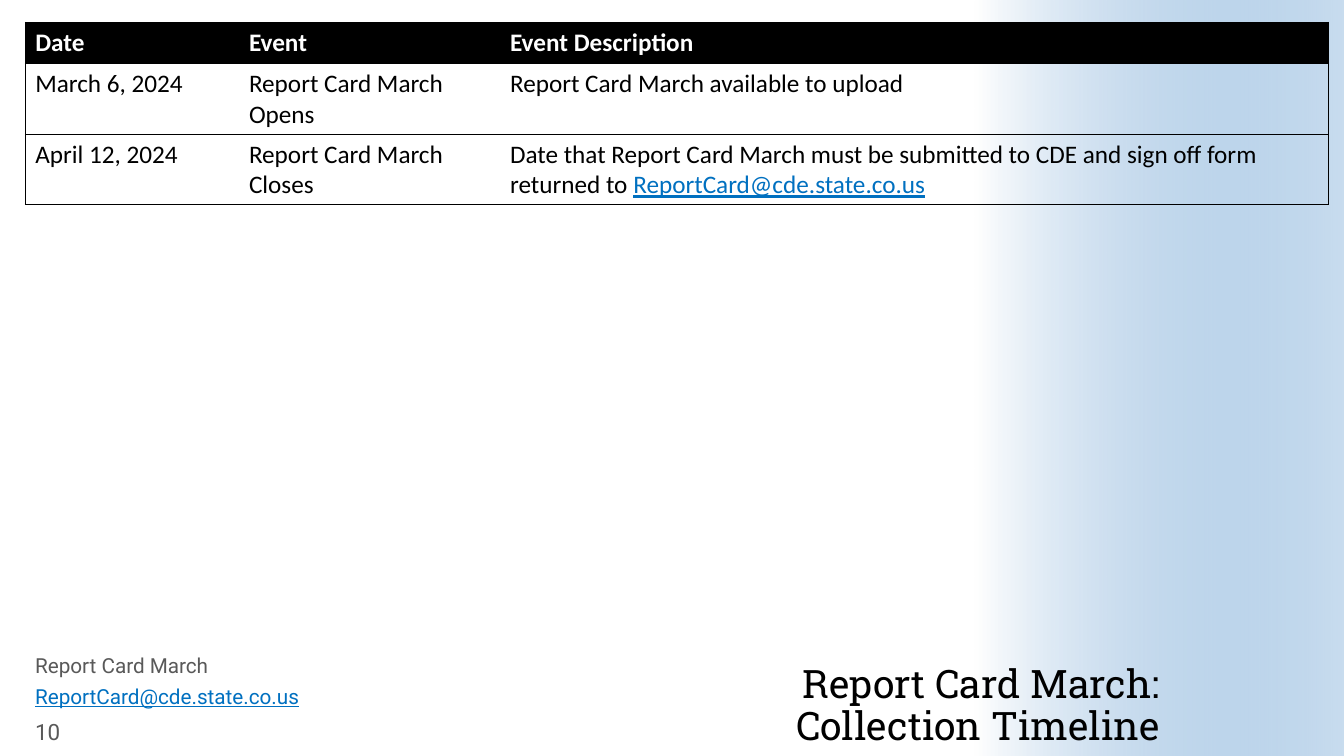
from dataclasses import dataclass

from lxml.etree import SubElement
from pptx import Presentation
from pptx.dml.color import RGBColor as RGB
from pptx.enum.shapes import MSO_SHAPE as SHAPE
from pptx.enum.text import MSO_ANCHOR as ANCHOR, PP_ALIGN as ALIGN
from pptx.oxml.ns import qn
from pptx.util import Inches, Pt


@dataclass(frozen=True)
class Theme:
    """Colours, fonts and type sizes of the deck."""
    black: RGB = RGB(0, 0, 0)
    white: RGB = RGB(255, 255, 255)
    gray: RGB = RGB(0x59, 0x59, 0x59)
    link: RGB = RGB(0x00, 0x70, 0xC0)
    blue: RGB = RGB(0x48, 0x8B, 0xC9)
    title_font: str = "Roboto Slab"
    table_font: str = "Calibri"
    footer_font: str = "Roboto"
    title_size: float = 28
    table_size: float = 18
    footer_size: float = 14.8
    number_size: float = 16


T = Theme()
EMAIL = "ReportCard@cde.state.co.us"
NO_GRID = "{2D5ABB26-0587-4C30-8999-92F81FD0307C}"
COLUMNS = (2.12, 2.59, 8.22)
ROW_HEIGHT = 0.41
TIMELINE = (
    ("Date", "Event", "Event Description"),
    ("March 6, 2024", "Report Card March Opens", "Report Card March available to upload"),
    ("April 12, 2024", "Report Card March Closes",
     "Date that Report Card March must be submitted to CDE and sign off form returned to "),
)


def set_font(font, name, size, color, bold=False, underline=None):
    """Apply one type style to a font."""
    font.name, font.size, font.bold = name, Pt(size), bold
    font.color.rgb = color
    font.underline = underline


def add_text(s, text, x, y, w, h):
    """Add a wrapping one-paragraph text box and return its frame and paragraph."""
    tf = s.shapes.add_textbox(Inches(x), Inches(y), Inches(w), Inches(h)).text_frame
    tf.word_wrap = True
    p = tf.paragraphs[0]
    p.text = text
    return tf, p


def add_side_band(s, x, y, w, h):
    """Fade from white to translucent blue across the box, using a turned rectangle."""
    left, top = x + (w - h) / 2, y + (h - w) / 2
    band = s.shapes.add_shape(SHAPE.RECTANGLE, Inches(left), Inches(top), Inches(h), Inches(w))
    band.rotation = 270
    band.shadow.inherit = False
    band.line.fill.background()
    band.fill.gradient()
    band.fill.gradient_angle = 270
    for stop, position, color in zip(band.fill.gradient_stops, (0, 1), (T.white, T.blue)):
        stop.position = position
        stop.color.rgb = color
    last_color = band.element.findall(".//" + qn("a:srgbClr"))[-1]
    SubElement(last_color, qn("a:alpha"), val="30000")


def add_borders(cell, sides):
    """Draw thin black lines on the given sides of a cell."""
    tcPr = cell._tc.get_or_add_tcPr()
    for i, side in enumerate(sides):
        ln = SubElement(tcPr, qn("a:ln" + side), w=str(Pt(0.5)))
        fill = SubElement(ln, qn("a:solidFill"))
        SubElement(fill, qn("a:srgbClr"), val=str(T.black))
        tcPr.insert(i, ln)


def add_timeline(s, x, y, w):
    """Place the table of collection dates."""
    rows, cols = len(TIMELINE), len(COLUMNS)
    frame = s.shapes.add_table(rows, cols, Inches(x), Inches(y), Inches(w), Inches(rows * ROW_HEIGHT))
    table = frame.table
    table.horz_banding = False
    table._tbl.tblPr.find(qn("a:tableStyleId")).text = NO_GRID
    for column, width in zip(table.columns, COLUMNS):
        column.width = Inches(width)
    for i, row in enumerate(TIMELINE):
        table.rows[i].height = Inches(ROW_HEIGHT)
        for j, text in enumerate(row):
            cell = table.cell(i, j)
            header = i == 0
            p = cell.text_frame.paragraphs[0]
            p.text = text
            set_font(p.font, T.table_font, T.table_size, T.white if header else T.black, header)
            if header:
                cell.fill.solid()
                cell.fill.fore_color.rgb = T.black
            else:
                cell.fill.background()
            sides = ["L"] * (j == 0) + ["R"] * (j == cols - 1) + ["T", "B"]
            add_borders(cell, sides)
    r = p.add_run()
    r.text = EMAIL
    r.font.color.rgb = T.link
    r.font.underline = True


def add_title(s, x, y, w, h):
    """Place the right-aligned title at the foot of its box."""
    tf, p = add_text(s, "Report Card March:\vCollection Timeline", x, y, w, h)
    tf.margin_left = tf.margin_right = tf.margin_top = tf.margin_bottom = 0
    tf.vertical_anchor = ANCHOR.BOTTOM
    p.alignment = ALIGN.RIGHT
    p.line_spacing = 0.9
    set_font(p.font, T.title_font, T.title_size, T.black)


def add_footer(s, x, y, w, h):
    """Stack the collection name, contact address and slide number."""
    step = h / 3
    lines = (("Report Card March", T.gray, None), (EMAIL, T.link, True))
    for i, (text, color, underline) in enumerate(lines):
        _, p = add_text(s, text, x, y + i * step, w, step)
        p.line_spacing = 0.8
        set_font(p.font, T.footer_font, T.footer_size, color, underline=underline)
    tf, p = add_text(s, "10", x, y + 2 * step, 0.85, step)
    tf.vertical_anchor = ANCHOR.MIDDLE
    set_font(p.font, T.footer_font, T.number_size, T.gray)


def main():
    """Build and save the slide."""
    prs = Presentation()
    prs.slide_width, prs.slide_height = Inches(13.33), Inches(7.5)
    s = prs.slides.add_slide(prs.slide_layouts[6])
    add_side_band(s, 9.67, 0, 3.66, 7.5)
    add_title(s, 4.26, 6.45, 7.24, 0.98)
    add_timeline(s, 0.25, 0.22, sum(COLUMNS))
    add_footer(s, 0.25, 6.47, 3.89, 0.94)
    prs.save("out.pptx")


if __name__ == "__main__":
    main()
